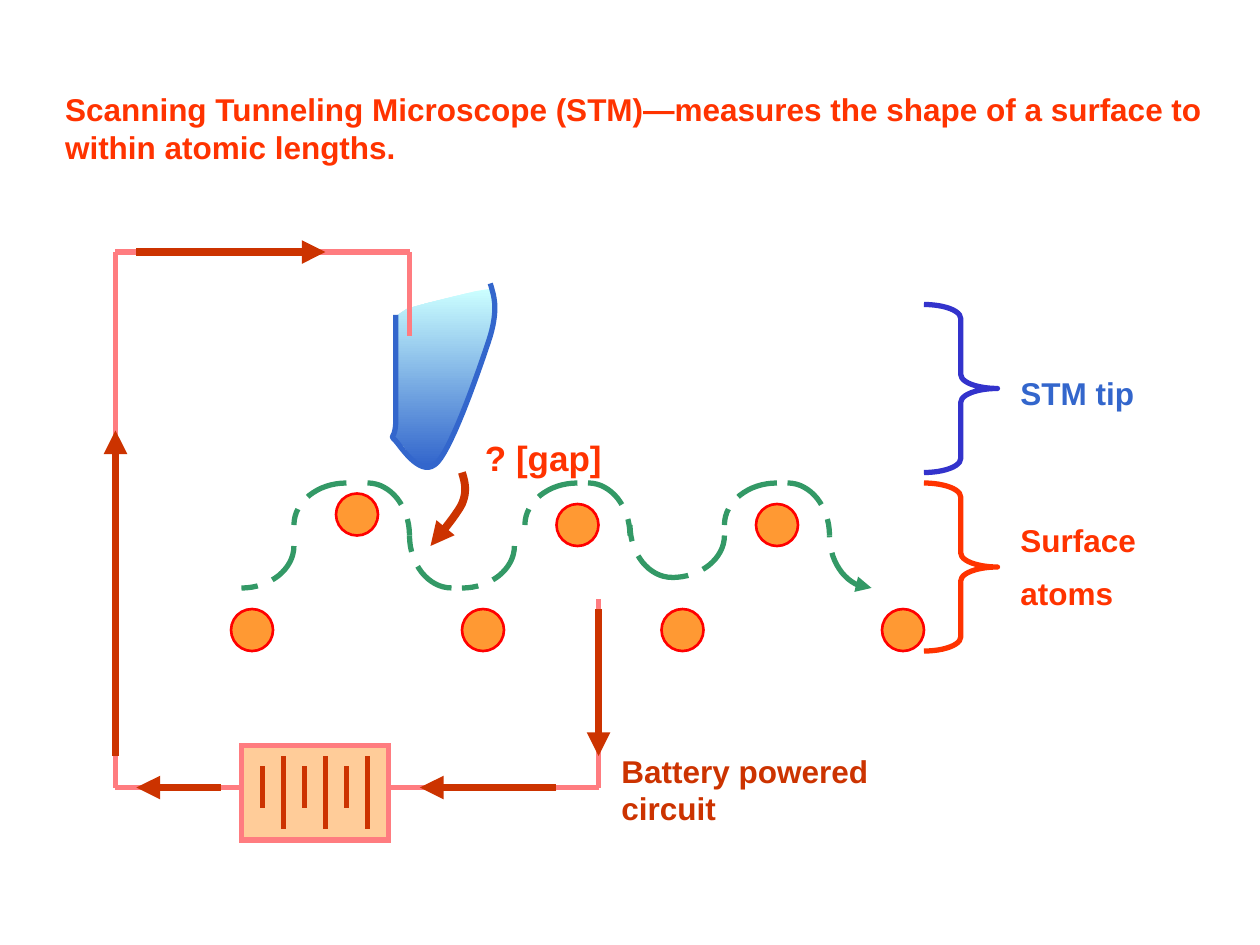
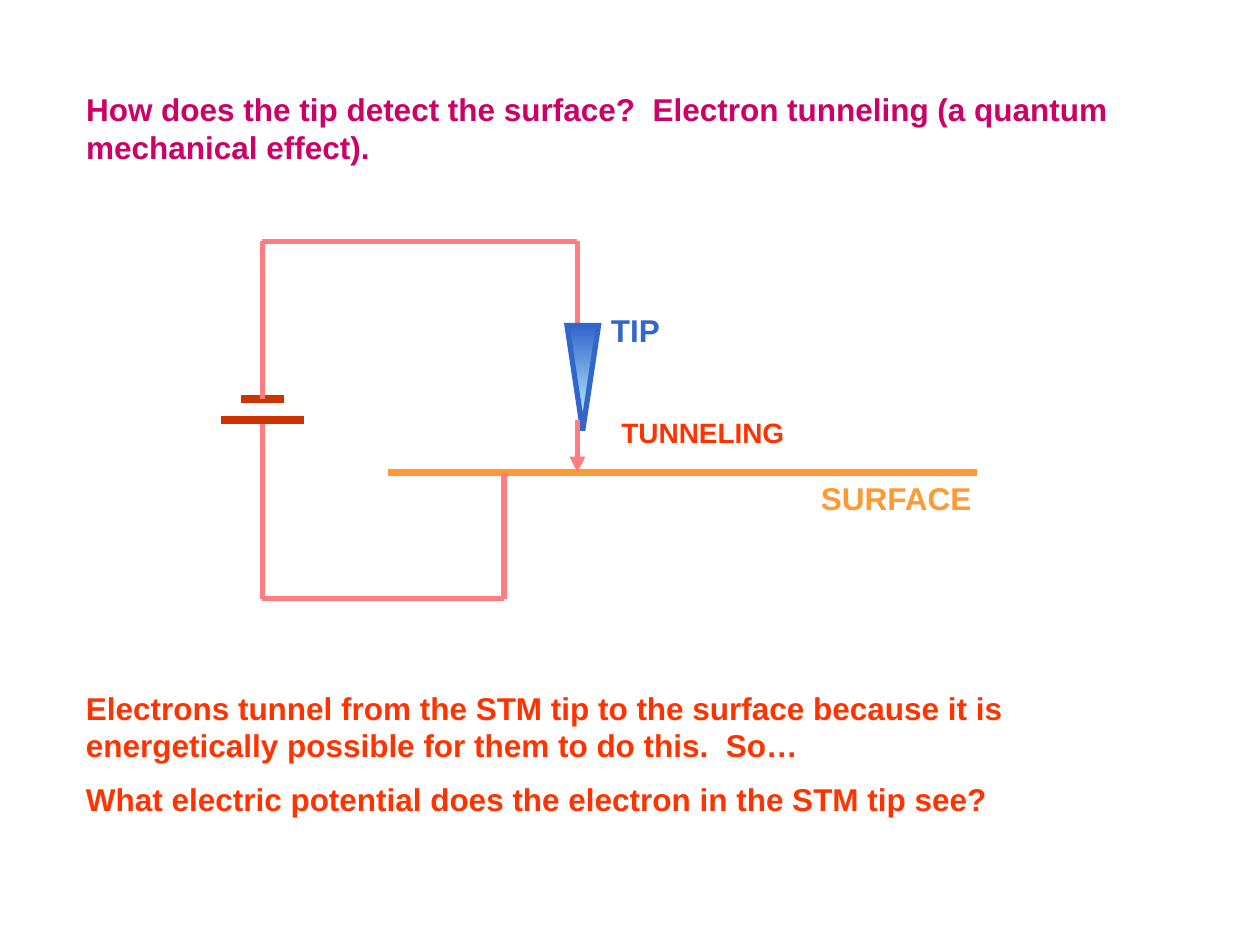
import pptx
import pptx.util
import pptx.dml.color
import pptx.enum.dml
import pptx.enum.shapes
import pptx.enum.text
import pptx.oxml.ns
import lxml.etree

# Lengths are in cells: 120 columns by 90 rows
WIDE, HIGH = pptx.util.Inches(10), pptx.util.Inches(7.5)
CELL = WIDE / 120
FONT = "Arial"
COLOR = {
    "red": "FF3300", "rose": "CC0066", "rust": "CC3300", "wire": "FF7C80",
    "atom": "FF9933", "rim": "FF0000", "wave": "339966", "tip": "3366CC",
    "glow": "CCFFFF", "brace": "3333CC", "case": "FFCC99",
}
THIN, THICK = 3, 4.5
KIND = pptx.enum.shapes.MSO_SHAPE

# Content: titles as (text, color, box)
TITLES = [
    ("Scanning Tunneling Microscope (STM)—measures the shape of a surface "
     "to within atomic lengths.", "red", (5, 8, 111, 8.4)),
    ("How does the tip detect the surface?  Electron tunneling (a quantum "
     "mechanical effect).", "rose", (7, 8, 107, 8.4)),
]
# Labels as (paragraphs, color, size, box)
LABELS = [
    [
        (["Surface", "atoms"], "red", 18, (96, 49, 15, 10.2)),
        (["STM tip"], "tip", 18, (96, 35, 15, 4.8)),
        (["Battery powered circuit"], "rust", 18, (58, 71, 27, 8.4)),
        (["? [gap]"], "red", 20, (45, 41, 16, 5.2)),
    ],
    [
        (["TUNNELING"], "red", 16, (58, 39, 28, 4.4)),
        (["TIP"], "tip", 18, (57, 29, 12, 4.8)),
        (["SURFACE"], "atom", 18, (77, 45, 34, 4.8)),
        (["Electrons tunnel from the STM tip to the surface because it is "
          "energetically possible for them to do this.  So…",
          "What electric potential does the electron in the STM tip see?"],
         "red", 18, (7, 65, 106, 13.8)),
    ],
]
# Lines as (color, width, corner points, arrow at the end)
LINES = [
    [
        ("wire", THIN, [(23, 75), (11, 75), (11, 24), (39, 24), (39, 32)], False),
        ("wire", THIN, [(37, 75), (57, 75), (57, 57)], False),
        ("rust", THICK, [(21, 75), (13, 75)], True),
        ("rust", THICK, [(11, 72), (11, 41)], True),
        ("rust", THICK, [(13, 24), (31, 24)], True),
        ("rust", THICK, [(57, 58), (57, 72)], True),
        ("rust", THICK, [(53, 75), (40, 75)], True),
    ],
    [
        ("atom", THICK, [(37, 45), (93, 45)], False),
        ("wire", THIN, [(48, 45), (48, 57), (25, 57), (25, 40)], False),
        ("rust", THICK, [(21, 40), (29, 40)], False),
        ("rust", THICK, [(23, 38), (27, 38)], False),
        ("wire", THIN, [(25, 38), (25, 23), (55, 23), (55, 33)], False),
    ],
]
ATOMS = [(32, 47), (53, 48), (72, 48), (22, 58), (44, 58), (63, 58), (84, 58)]
# Quarter waves as (start, end, starts upright)
WAVES = [
    ((28, 52), (23, 56), True), ((33, 46), (28, 50), False),
    ((35, 46), (39, 51), False), ((43, 56), (39, 51), False),
    ((49, 52), (44, 56), True), ((55, 46), (50, 50), False),
    ((56, 46), (60, 51), False), ((64, 55), (60, 50), False),
    ((69, 51), (64, 55), True), ((74, 46), (69, 50), False),
    ((75, 46), (79, 51), False), ((83, 56), (79, 51), False),
]
BRACES = [("red", 46), ("brace", 29)]
# Curves: a start, then three points for each cubic piece
EDGE = [(37.7, 30), (37.7, 34), (37.7, 38), (37.7, 40), (37.7, 42), (37, 41.3),
        (37.7, 42), (38.3, 42.7), (40.2, 45.7), (41.7, 44), (43.2, 42.3),
        (45.8, 34.8), (46.7, 32), (47.5, 29.2), (47, 28.1), (46.7, 27)]
JUMP = [(44, 45), (44.3, 46), (44.5, 46.8), (44, 48), (43.4, 49.2),
        (41.5, 51.4), (41, 52)]
BODY = [(37.9, 30), (37.7, 34.2), (37.6, 41.3), (37.7, 41.9), (38.5, 42.5),
        (39.1, 43.4), (39.7, 44), (40.6, 44.3), (41.5, 44.2), (41.9, 43.8),
        (43, 41.8), (43.6, 40), (44.4, 38.3), (44.6, 37.2), (46, 34),
        (46.6, 32.2), (47, 31.1), (47, 30.7), (46.9, 28.7), (46.7, 27.5),
        (45.5, 27.7), (43.4, 28.2), (40.6, 28.9), (38.8, 29.4)]


def emu(n):
    return int(round(n * CELL))


def rgb(name):
    return pptx.dml.color.RGBColor.from_string(COLOR[name])


def sub(node, tag, **attrs):
    return lxml.etree.SubElement(node, pptx.oxml.ns.qn(tag), attrs)


def stroke(item, name, width, *ends):
    """Set the line; ends are tags such as a:tailEnd."""
    item.line.color.rgb = rgb(name)
    item.line.width = pptx.util.Pt(width)
    ln = item.element.spPr.find(pptx.oxml.ns.qn("a:ln"))
    for tag in ends:
        if tag == "a:miter":
            sub(ln, tag, lim="800000")
        else:
            sub(ln, tag, type="triangle")


def shade(item):
    item.fill.gradient()
    item.fill.gradient_angle = 270
    for stop, name in zip(item.fill.gradient_stops, ("glow", "tip")):
        stop.color.rgb = rgb(name)


def shape(slide, kind, box, fill=None):
    item = slide.shapes.add_shape(kind, *map(emu, box))
    item.shadow.inherit = False
    if fill:
        item.fill.solid()
        item.fill.fore_color.rgb = rgb(fill)
    else:
        item.fill.background()
    return item


def route(slide, name, width, points, arrow=False):
    for start, end in zip(points, points[1:]):
        line = slide.shapes.add_connector(
            pptx.enum.shapes.MSO_CONNECTOR.STRAIGHT, *map(emu, start + end))
        stroke(line, name, width, *(["a:tailEnd"] if arrow else []))
        sub(line.element.spPr, "a:effectLst")


def bend(nodes, steps=16):
    """Points along a chain of cubic curves."""
    points = [nodes[0]]
    for i in range(0, len(nodes) - 1, 3):
        for k in range(1, steps + 1):
            t = k / steps
            mix = ((1 - t) ** 3, 3 * t * (1 - t) ** 2, 3 * t * t * (1 - t), t ** 3)
            points.append(tuple(
                sum(m * node[axis] for m, node in zip(mix, nodes[i:i + 4]))
                for axis in (0, 1)))
    return points


def trace(slide, points, close=False):
    spots = [(emu(x), emu(y)) for x, y in points]
    pen = slide.shapes.build_freeform(*spots[0])
    pen.add_line_segments(spots[1:], close=close)
    item = pen.convert_to_shape()
    item.shadow.inherit = False
    item.fill.background()
    return item


def wave(slide, start, end, upright):
    corner = (start[0], end[1]) if upright else (end[0], start[1])
    near, far = [tuple(p + 0.55 * (c - p) for p, c in zip(spot, corner))
                 for spot in (start, end)]
    item = trace(slide, bend([start, near, far, end]))
    item.line.dash_style = pptx.enum.dml.MSO_LINE.LONG_DASH
    last = (start, end, upright) == WAVES[-1]
    stroke(item, "wave", THIN, *(["a:headEnd"] if last else []))


def write(item, paras, name, size):
    frame = item.text_frame
    frame.word_wrap = True
    frame.auto_size = pptx.enum.text.MSO_AUTO_SIZE.NONE
    frame.vertical_anchor = pptx.enum.text.MSO_ANCHOR.TOP
    frame.text = "\n".join(paras)
    for i, para in enumerate(frame.paragraphs):
        para.alignment = pptx.enum.text.PP_ALIGN.LEFT
        if i:
            para.space_before = pptx.util.Pt(size / 2)
        for run in para.runs:
            font = run.font
            font.name, font.size, font.bold = FONT, pptx.util.Pt(size), True
            font.color.rgb = rgb(name)


def start(deck, page):
    slide = deck.slides.add_slide(deck.slide_layouts[5])
    text, name, box = TITLES[page]
    title = slide.shapes.title
    title.left, title.top, title.width, title.height = map(emu, box)
    write(title, [text], name, 18)
    return slide


def finish(slide, page):
    for line in LINES[page]:
        route(slide, *line)
    for paras, name, size, box in LABELS[page]:
        write(slide.shapes.add_textbox(*map(emu, box)), paras, name, size)


def scope(deck):
    slide = start(deck, 0)
    # Surface atoms and the path of the tip
    for x, y in ATOMS:
        stroke(shape(slide, KIND.OVAL, (x, y, 4, 4), "atom"), "rim", 1.5)
    for part in WAVES:
        wave(slide, *part)
    for name, top in BRACES:
        brace = shape(slide, KIND.RIGHT_BRACE, (88, top, 7, 16))
        brace.adjustments[0] = 0.19
        stroke(brace, name, THIN)
    # Battery with six plates, short and long in turn
    case = shape(slide, KIND.RECTANGLE, (23, 71, 14, 9), "case")
    stroke(case, "wire", THIN, "a:miter")
    for i in range(6):
        x, (top, end) = 25 + 2 * i, [(73, 77), (72, 79)][i % 2]
        route(slide, "rust", THIN, [(x, top), (x, end)])
    # Tip and gap arrow
    body = trace(slide, BODY, close=True)
    shade(body)
    body.line.fill.background()
    stroke(trace(slide, bend(EDGE)), "tip", THIN)
    stroke(trace(slide, bend(JUMP)), "rust", THICK, "a:tailEnd")
    finish(slide, 0)


def tunnel(deck):
    slide = start(deck, 1)
    finish(slide, 1)
    # Tip pointing down, then the tunneling arrow
    tip = shape(slide, KIND.ISOSCELES_TRIANGLE, (54, 31, 3, 10))
    tip.element.spPr.find(pptx.oxml.ns.qn("a:xfrm")).set("flipV", "1")
    shade(tip)
    stroke(tip, "tip", THIN, "a:miter")
    route(slide, "wire", THIN, [(55, 40), (55, 45)], True)


def main():
    deck = pptx.Presentation()
    deck.slide_width, deck.slide_height = WIDE, HIGH
    scope(deck)
    tunnel(deck)
    deck.save("out.pptx")


if __name__ == "__main__":
    main()
